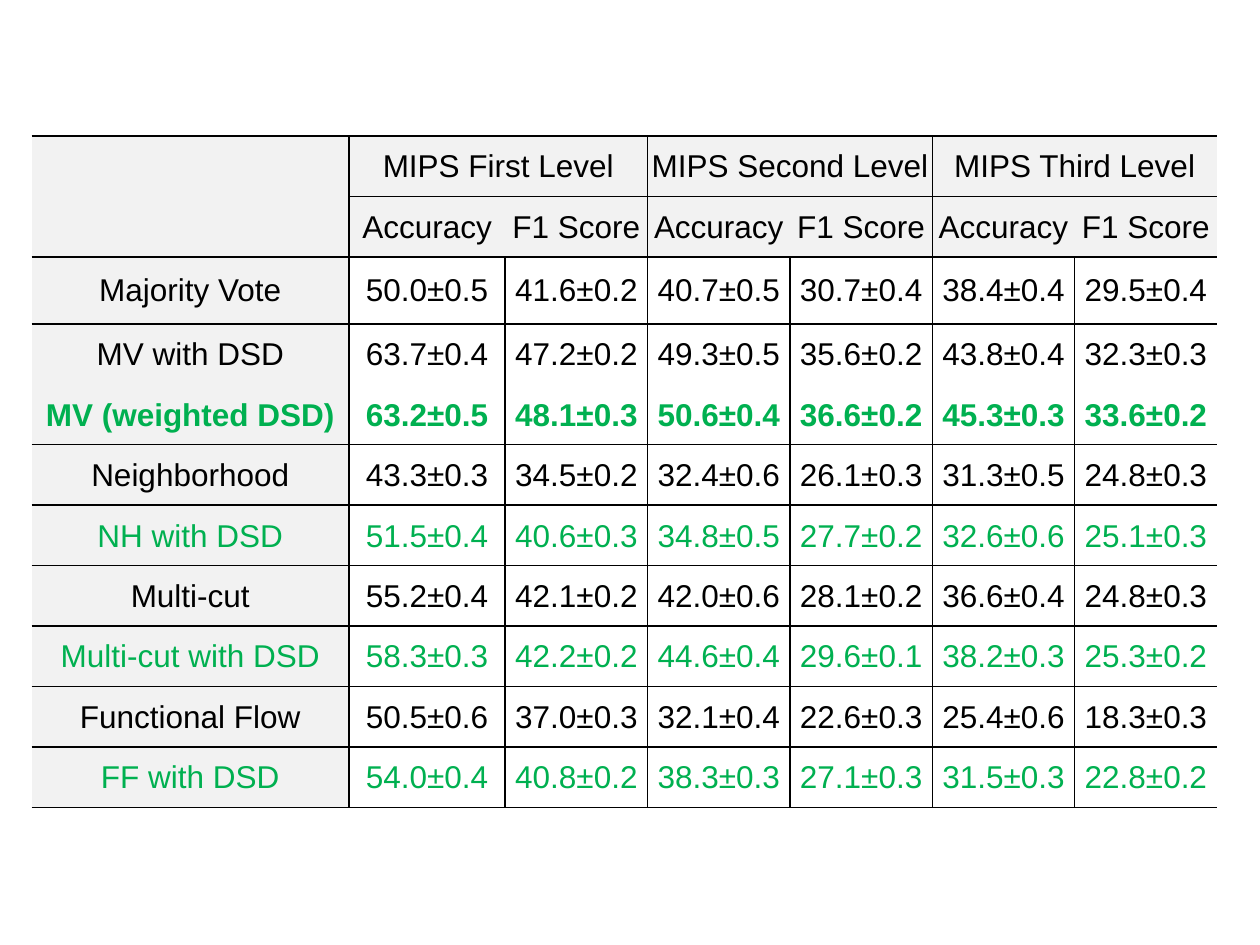
from lxml.etree import SubElement
from pptx import Presentation
from pptx.dml.color import RGBColor as RGB
from pptx.enum.text import MSO_ANCHOR as ANCHOR, PP_ALIGN as ALIGN
from pptx.oxml.ns import qn
from pptx.util import Inches, Pt

COLORS = {"text": "000000", "dsd": "00B050", "header": "F2F2F2", "line": "000000"}
COL_WIDTHS = [2.52, 1.24] + [1.13] * 5
ROW_HEIGHTS = [0.48, 0.48, 0.53] + [0.48] * 8
HEADER_ROWS = 2
BEST_ROW = 4
GREEN_ROWS = (4, 6, 8, 10)
ROWS = [
    ["", "MIPS First Level", "", "MIPS Second Level", "", "MIPS Third Level", ""],
    [""] + ["Accuracy", "F1 Score"] * 3,
    ["Majority Vote", "50.0±0.5", "41.6±0.2", "40.7±0.5", "30.7±0.4", "38.4±0.4", "29.5±0.4"],
    ["MV with DSD", "63.7±0.4", "47.2±0.2", "49.3±0.5", "35.6±0.2", "43.8±0.4", "32.3±0.3"],
    ["MV (weighted DSD)", "63.2±0.5", "48.1±0.3", "50.6±0.4", "36.6±0.2", "45.3±0.3", "33.6±0.2"],
    ["Neighborhood", "43.3±0.3", "34.5±0.2", "32.4±0.6", "26.1±0.3", "31.3±0.5", "24.8±0.3"],
    ["NH with DSD", "51.5±0.4", "40.6±0.3", "34.8±0.5", "27.7±0.2", "32.6±0.6", "25.1±0.3"],
    ["Multi-cut", "55.2±0.4", "42.1±0.2", "42.0±0.6", "28.1±0.2", "36.6±0.4", "24.8±0.3"],
    ["Multi-cut with DSD", "58.3±0.3", "42.2±0.2", "44.6±0.4", "29.6±0.1", "38.2±0.3", "25.3±0.2"],
    ["Functional Flow", "50.5±0.6", "37.0±0.3", "32.1±0.4", "22.6±0.3", "25.4±0.6", "18.3±0.3"],
    ["FF with DSD", "54.0±0.4", "40.8±0.2", "38.3±0.3", "27.1±0.3", "31.5±0.3", "22.8±0.2"],
]


def has_vertical(row, edge):
    """Tell whether a line runs along a column edge in this row."""
    return 0 < edge < len(COL_WIDTHS) and (row >= HEADER_ROWS or edge % 2 == 1)


def has_horizontal(edge, col):
    """Tell whether a line runs along a row edge in this column."""
    return edge != BEST_ROW and (edge, col) != (1, 0)


def set_borders(cell, row, col, span):
    """Draw or clear the four borders of a cell."""
    sides = {
        "L": has_vertical(row, col),
        "R": has_vertical(row, col + span),
        "T": has_horizontal(row, col),
        "B": has_horizontal(row + 1, col),
    }
    tc_pr = cell._tc.get_or_add_tcPr()
    for side, drawn in sides.items():
        ln = SubElement(tc_pr, qn(f"a:ln{side}"), w=str(Pt(1)))
        if drawn:
            fill = SubElement(ln, qn("a:solidFill"))
            SubElement(fill, qn("a:srgbClr"), val=COLORS["line"])
        else:
            SubElement(ln, qn("a:noFill"))


def set_fill(cell, row, col):
    """Shade header cells and leave the others clear."""
    if row < HEADER_ROWS or col == 0:
        cell.fill.solid()
        cell.fill.fore_color.rgb = RGB.from_string(COLORS["header"])
    else:
        cell.fill.background()


def set_text(cell, row, text):
    """Write centred text in the style of its row."""
    cell.vertical_anchor = ANCHOR.MIDDLE
    cell.margin_left = cell.margin_right = cell.margin_top = Inches(0.01)
    cell.margin_bottom = 0
    p = cell.text_frame.paragraphs[0]
    p.text = text
    p.alignment = ALIGN.CENTER
    for r in p.runs:
        r.font.name = "Arial"
        r.font.size = Pt(18)
        r.font.bold = row == BEST_ROW
        r.font.color.rgb = RGB.from_string(COLORS["dsd" if row in GREEN_ROWS else "text"])


def add_results_table(s):
    """Add the table of accuracy and F1 scores."""
    table = s.shapes.add_table(
        len(ROWS), len(COL_WIDTHS), Inches(0.25), Inches(1.08),
        Inches(sum(COL_WIDTHS)), Inches(sum(ROW_HEIGHTS))).table
    table.first_row = table.horz_banding = False
    for column, width in zip(table.columns, COL_WIDTHS):
        column.width = Inches(width)
    for table_row, height in zip(table.rows, ROW_HEIGHTS):
        table_row.height = Inches(height)
    for col in (1, 3, 5):
        table.cell(0, col).merge(table.cell(0, col + 1))
    for row, texts in enumerate(ROWS):
        for col, text in enumerate(texts):
            cell = table.cell(row, col)
            span = cell.span_width if cell.is_merge_origin else 1
            set_borders(cell, row, col, span)
            set_fill(cell, row, col)
            set_text(cell, row, text)


def main():
    """Build the slide and save it."""
    prs = Presentation()
    prs.slide_width, prs.slide_height = Inches(10), Inches(7.5)
    s = prs.slides.add_slide(prs.slide_layouts[6])
    add_results_table(s)
    prs.save("out.pptx")


if __name__ == "__main__":
    main()
